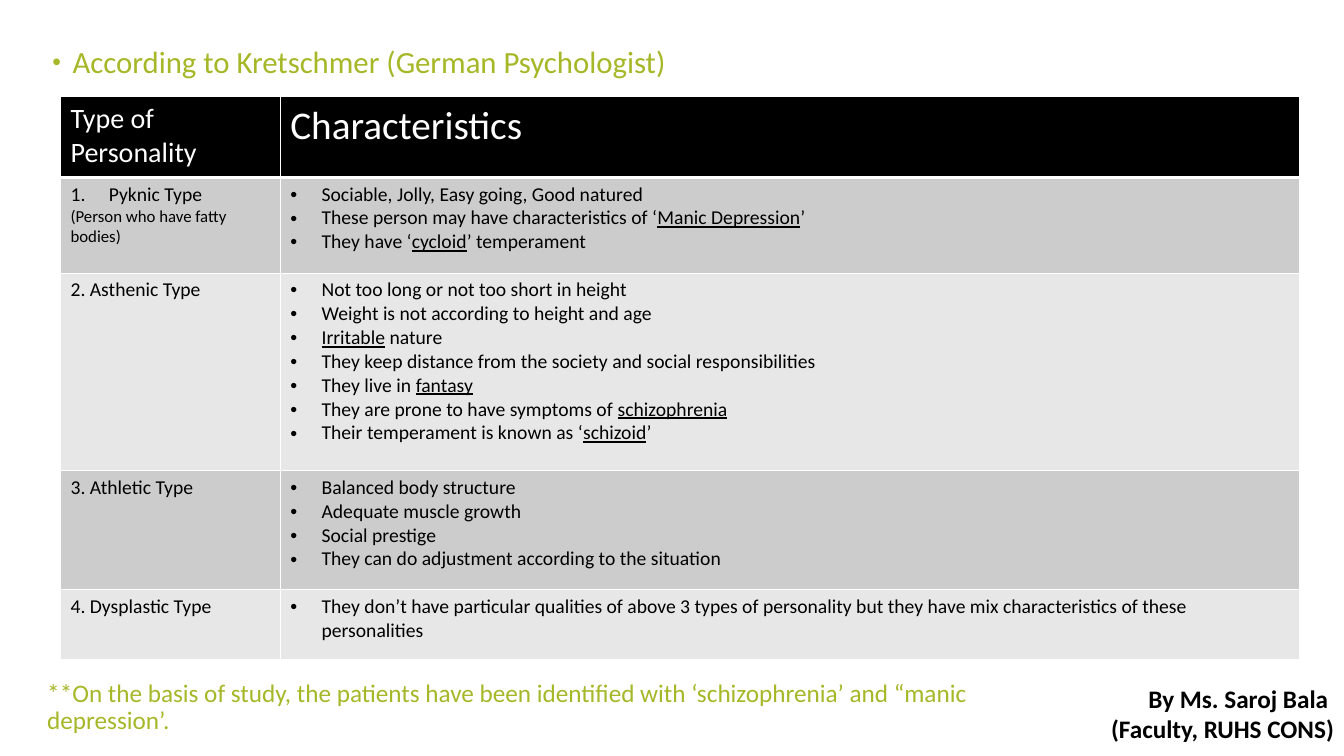
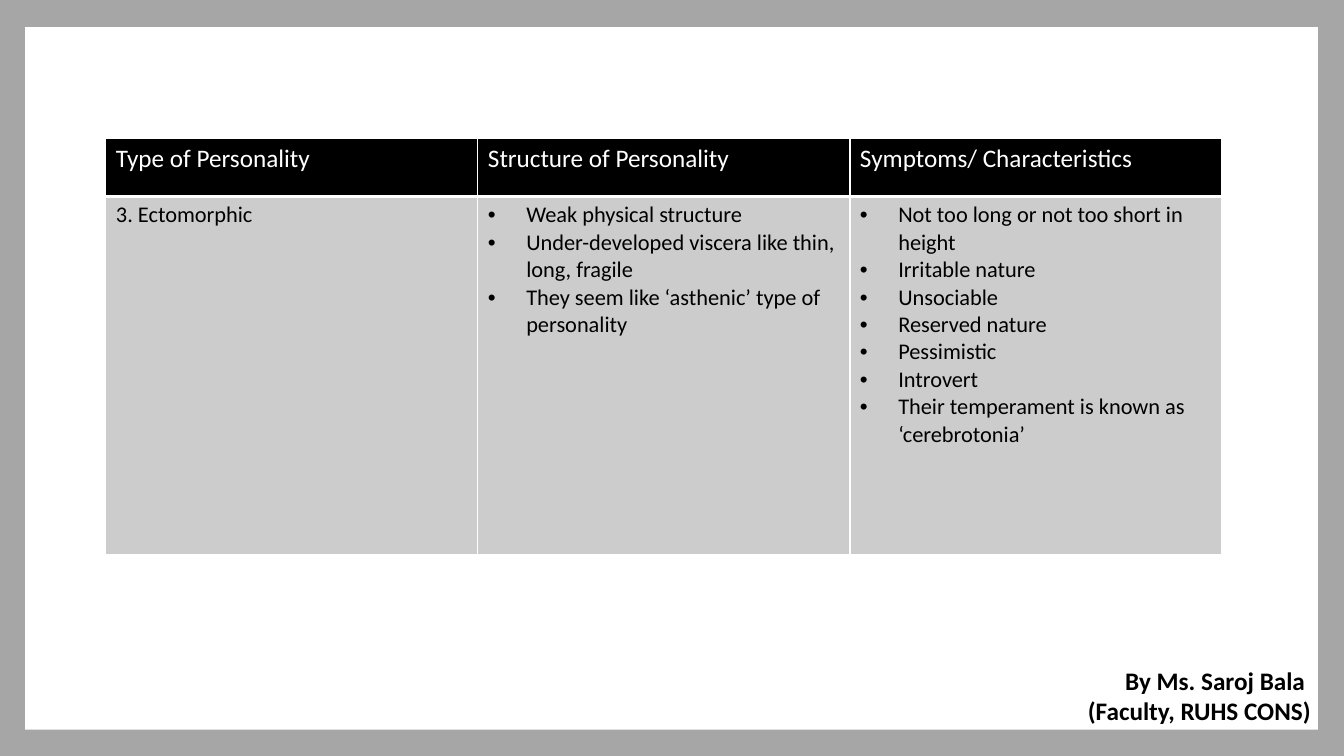
"""Builds two slides of tables on types of personality."""
import pptx
import pptx.dml.color
import pptx.enum.shapes
import pptx.enum.text
import pptx.oxml.ns
import pptx.util
from lxml import etree

PX = 9144
FONT = "Calibri"
COLORS = {
    "white": "FFFFFF",
    "black": "000000",
    "lime": "A6B727",
    "gray": "A6A6A6",
    "band_dark": "CCCCCC",
    "band_light": "E7E7E7",
}
TITLE_ONLY, BLANK = 5, 6
CREDIT = "By Ms. Saroj Bala \n(Faculty, RUHS CONS)"

KRETSCHMER_HEADER = ["Type of Personality", "Characteristics"]
KRETSCHMER_ROWS = [
    [
        ["1. Pyknic Type", "(Person who have fatty bodies)"],
        [
            "• Sociable, Jolly, Easy going, Good natured",
            "• These person may have characteristics of ‘_Manic Depression_’",
            "• They have ‘_cycloid_’ temperament",
        ],
    ],
    [
        ["2. Asthenic Type"],
        [
            "• Not too long or not too short in height",
            "• Weight is not according to height and age",
            "• _Irritable_ nature",
            "• They keep distance from the society and social responsibilities",
            "• They live in _fantasy_ ",
            "• They are prone to have symptoms of _schizophrenia_ ",
            "• Their temperament is known as ‘_schizoid_’",
        ],
    ],
    [
        ["3. Athletic Type"],
        [
            "• Balanced body structure",
            "• Adequate muscle growth",
            "• Social prestige",
            "• They can do adjustment according to the situation",
        ],
    ],
    [
        ["4. Dysplastic Type"],
        [
            "• They don’t have particular qualities of above 3 types of personality "
            "but they have mix characteristics of these personalities",
        ],
    ],
]
ECTOMORPHIC_HEADER = ["Type of Personality", "Structure of Personality", "Symptoms/ Characteristics"]
ECTOMORPHIC_ROWS = [
    [
        ["3. Ectomorphic"],
        [
            "• Weak physical structure",
            "• Under-developed viscera like thin, long, fragile",
            "• They seem like ‘asthenic’ type of personality",
        ],
        [
            "• Not too long or not too short in height",
            "• Irritable nature",
            "• Unsociable",
            "• Reserved nature",
            "• Pessimistic",
            "• Introvert",
            "• Their temperament is known as ‘cerebrotonia’",
        ],
    ],
]


def px(*lengths):
    """Turn pixel lengths into EMU."""
    return [pptx.util.Emu(length * PX) for length in lengths]


def rgb(name):
    """Look up a named colour."""
    return pptx.dml.color.RGBColor.from_string(COLORS[name])


def add_xml(parent, tag, **attributes):
    """Append a drawing element with attributes to a parent."""
    return etree.SubElement(parent, pptx.oxml.ns.qn(tag), attributes)


def format_runs(paragraph, size, color, bold=False):
    """Give every run of a paragraph its font."""
    for run in paragraph.runs:
        run.font.name = FONT
        run.font.size = pptx.util.Pt(size)
        run.font.bold = bold
        run.font.color.rgb = rgb(color)


def set_marker(paragraph, left, hanging, color=None, scale=None, numbered=False):
    """Give a paragraph a hanging bullet or number."""
    properties = paragraph._p.get_or_add_pPr()
    properties.set("marL", str(left * PX))
    properties.set("indent", str(-hanging * PX))
    if color:
        add_xml(add_xml(properties, "a:buClr"), "a:srgbClr", val=COLORS[color])
    if scale:
        add_xml(properties, "a:buSzPct", val=str(scale * 1000))
    if numbered:
        add_xml(properties, "a:buFont", typeface="+mj-lt")
        add_xml(properties, "a:buAutoNum", type="arabicPeriod")
    else:
        add_xml(properties, "a:buFont", typeface="Arial")
        add_xml(properties, "a:buChar", char="•")


def set_borders(cell, bottom):
    """Draw white cell borders, with a chosen bottom width in points."""
    properties = cell._tc.get_or_add_tcPr()
    widths = {"a:lnL": 1, "a:lnR": 1, "a:lnT": 1, "a:lnB": bottom}
    for index, (tag, width) in enumerate(widths.items()):
        line = add_xml(properties, tag, w=str(width * 12700))
        add_xml(add_xml(line, "a:solidFill"), "a:srgbClr", val=COLORS["white"])
        properties.insert(index, line)


def fill_cell(cell, fill, bottom=1):
    """Set the fill and borders of a cell."""
    cell.fill.solid()
    cell.fill.fore_color.rgb = rgb(fill)
    set_borders(cell, bottom)


def write_lines(cell, lines, size, hanging):
    """Write marked lines, with underlined words between underscores."""
    for index, line in enumerate(lines):
        frame = cell.text_frame
        paragraph = frame.add_paragraph() if index else frame.paragraphs[0]
        numbered = line.startswith("1. ")
        if numbered:
            set_marker(paragraph, 38, 38, numbered=True)
            line = line[3:]
        elif line.startswith("• "):
            set_marker(paragraph, hanging, hanging)
            line = line[2:]
        for part_index, part in enumerate(line.split("_")):
            if part:
                run = paragraph.add_run()
                run.text = part
                run.font.underline = part_index % 2 == 1
        format_runs(paragraph, size - 2 if line.startswith("(") else size, "black")


def add_type_table(slide, box, widths, heights, header, header_sizes, rows, size, hanging):
    """Add a table with a black header and alternating gray rows."""
    table = slide.shapes.add_table(len(heights), len(widths), *px(*box)).table
    for column, width in zip(table.columns, px(*widths)):
        column.width = width
    for row, height in zip(table.rows, px(*heights)):
        row.height = height
    for column, (text, header_size) in enumerate(zip(header, header_sizes)):
        cell = table.cell(0, column)
        cell.text_frame.text = text
        format_runs(cell.text_frame.paragraphs[0], header_size, "white")
        fill_cell(cell, "black", bottom=3)
    for row, cells in enumerate(rows, 1):
        for column, lines in enumerate(cells):
            cell = table.cell(row, column)
            write_lines(cell, lines, size, hanging)
            fill_cell(cell, "band_dark" if row % 2 else "band_light")


def add_text(slide, box, text, size, color, bold=False, align="LEFT", spacing=1.0):
    """Add an unwrapped text box."""
    frame = slide.shapes.add_textbox(*px(*box)).text_frame
    frame.word_wrap = False
    frame.text = text
    for paragraph in frame.paragraphs:
        paragraph.alignment = getattr(pptx.enum.text.PP_ALIGN, align)
        paragraph.line_spacing = spacing
        format_runs(paragraph, size, color, bold)


def add_credit(slide, left, top):
    """Add the author's name at a corner position."""
    add_text(slide, (left, top, 244, 71), CREDIT, 18, "black", bold=True, align="RIGHT")


def set_heading(slide, box, text):
    """Place and format the title as a bulleted heading."""
    title = slide.shapes.title
    title.left, title.top, title.width, title.height = px(*box)
    frame = title.text_frame
    frame.text = text
    frame.vertical_anchor = pptx.enum.text.MSO_ANCHOR.TOP
    frame.auto_size = pptx.enum.text.MSO_AUTO_SIZE.NONE
    paragraph = frame.paragraphs[0]
    paragraph.alignment = pptx.enum.text.PP_ALIGN.LEFT
    paragraph.line_spacing = 0.9
    set_marker(paragraph, 25, 20, color="lime", scale=80)
    format_runs(paragraph, 22, "lime")


def add_slide(presentation, layout, background):
    """Add a slide with a plain background."""
    slide = presentation.slides.add_slide(presentation.slide_layouts[layout])
    slide.background.fill.solid()
    slide.background.fill.fore_color.rgb = rgb(background)
    return slide


def add_panel(slide, box):
    """Add the white panel inside the gray frame."""
    panel = slide.shapes.add_shape(pptx.enum.shapes.MSO_SHAPE.RECTANGLE, *px(*box))
    panel.shadow.inherit = False
    panel.fill.solid()
    panel.fill.fore_color.rgb = rgb("white")
    panel.line.fill.background()


def build_kretschmer(presentation):
    """Build the slide on Kretschmer's types."""
    slide = add_slide(presentation, TITLE_ONLY, "white")
    set_heading(slide, (37, 42, 1150, 48), "According to Kretschmer (German Psychologist)")
    add_type_table(slide, (60, 96, 1229, 558), (218, 1011), (80, 95, 196, 118, 69),
                   KRETSCHMER_HEADER, (20, 28), KRETSCHMER_ROWS, 14, 31)
    add_text(slide, (37, 670, 1052, 38),
             "**On the basis of study, the patients have been identified with "
             "‘schizophrenia’ and “manic depression’.", 18, "lime", spacing=0.9)
    add_credit(slide, 1089, 673)


def build_ectomorphic(presentation):
    """Build the framed slide on the ectomorphic type."""
    slide = add_slide(presentation, BLANK, "gray")
    add_panel(slide, (25, 27, 1282, 697))
    add_type_table(slide, (105, 137, 1107, 413), (369,) * 3, (58, 355),
                   ECTOMORPHIC_HEADER, (18,) * 3, ECTOMORPHIC_ROWS, 16, 38)
    add_credit(slide, 1066, 655)


def main():
    """Build and save the presentation."""
    presentation = pptx.Presentation()
    presentation.slide_width, presentation.slide_height = px(1333, 750)
    build_kretschmer(presentation)
    build_ectomorphic(presentation)
    presentation.save("out.pptx")


if __name__ == "__main__":
    main()
